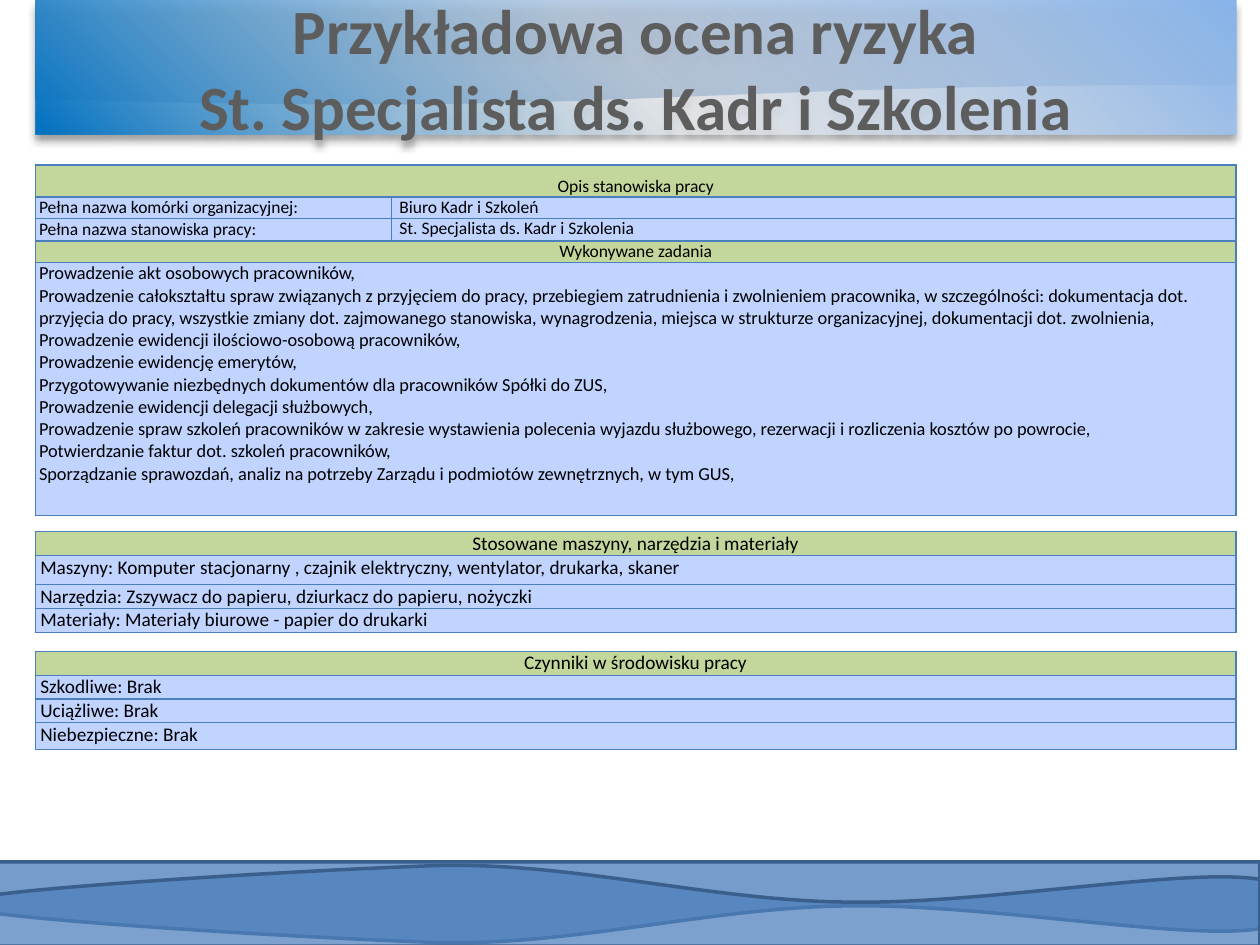
from lxml import etree
from pptx import Presentation
from pptx.dml.color import RGBColor
from pptx.enum.shapes import MSO_SHAPE
from pptx.enum.text import MSO_ANCHOR, PP_ALIGN
from pptx.oxml import parse_xml
from pptx.oxml.ns import nsdecls, qn
from pptx.util import Inches, Pt

RECT, DOCUMENT = MSO_SHAPE.RECTANGLE, MSO_SHAPE.FLOWCHART_DOCUMENT
TOP, MIDDLE = MSO_ANCHOR.TOP, MSO_ANCHOR.MIDDLE
LEFT, CENTER = PP_ALIGN.LEFT, PP_ALIGN.CENTER

COLORS = {
    "blue": "4F81BD", "wave_line": "3A5F8C", "border": "4B7EBC",
    "header": "C3D69B", "cell": "C0D4FF", "text": "000000", "title": "5D5D5D",
    "grad_start": "0070C0", "grad_mid": "F9FBFE", "grad_end": "87B3E9",
}
X, WIDTH = 0.28, 9.53

TASKS = [
    "Prowadzenie akt osobowych pracowników,",
    "Prowadzenie całokształtu spraw związanych z przyjęciem do pracy, przebiegiem "
    "zatrudnienia i zwolnieniem pracownika, w szczególności: dokumentacja dot. przyjęcia "
    "do pracy, wszystkie zmiany dot. zajmowanego stanowiska, wynagrodzenia, miejsca w "
    "strukturze organizacyjnej, dokumentacji dot. zwolnienia,",
    "Prowadzenie ewidencji ilościowo-osobową pracowników,",
    "Prowadzenie ewidencję emerytów,",
    "Przygotowywanie niezbędnych dokumentów dla pracowników Spółki do ZUS,",
    "Prowadzenie ewidencji delegacji służbowych,",
    "Prowadzenie spraw szkoleń pracowników w zakresie wystawienia polecenia wyjazdu "
    "służbowego, rezerwacji i rozliczenia kosztów po powrocie,",
    "Potwierdzanie faktur dot. szkoleń pracowników,",
    "Sporządzanie sprawozdań, analiz na potrzeby Zarządu i podmiotów zewnętrznych, "
    "w tym GUS,",
]

# Wave outline: straight edges, then curves of two control points and an end
WAVE_LINES = [(-0.03, 6.84), (10, 6.84), (10, 7.37)]
WAVE_CURVES = [
    [(9.42, 7.47), (7.82, 7.17), (6.73, 7.19)],
    [(5.64, 7.2), (4.55, 7.51), (3.46, 7.48)],
    [(2.36, 7.44), (0.58, 7.33), (-0.02, 7.25)],
]
WAVE_MIRROR = 14.35


def rgb(name):
    return RGBColor.from_string(COLORS[name])


class SlideBuilder:
    font = "Calibri"

    def __init__(self, slide):
        self.s = slide

    def style(self, p, size, color="text", bold=False, align=LEFT):
        p.alignment = align
        p.font.name, p.font.size, p.font.bold = self.font, Pt(size), bold
        p.font.color.rgb = rgb(color)

    def wave(self, opacity, mirrored=False):
        def emu(point):
            x, y = point
            return Inches(x), Inches(WAVE_MIRROR - y if mirrored else y)

        corners = [emu(pt) for pt in WAVE_LINES + [curve[-1] for curve in WAVE_CURVES]]
        builder = self.s.shapes.build_freeform(*corners[0])
        builder.add_line_segments(corners[1:], close=True)
        sp = builder.convert_to_shape()
        # Bend the last edges into Bezier curves
        edges = list(sp._element.iter(qn("a:lnTo")))[len(WAVE_LINES) - 1:]
        for edge, curve in zip(edges, WAVE_CURVES):
            bezier = etree.Element(qn("a:cubicBezTo"))
            for x, y in map(emu, curve):
                etree.SubElement(bezier, qn("a:pt"), x=str(x - sp.left), y=str(y - sp.top))
            edge.getparent().replace(edge, bezier)
        sp.shadow.inherit = False
        sp.fill.solid()
        sp.fill.fore_color.rgb = rgb("blue")
        color = sp.fill._xPr.find(qn("a:solidFill"))[0]
        etree.SubElement(color, qn("a:alpha"), val=str(opacity * 1000))
        sp.line.color.rgb = rgb("wave_line")
        sp.line.width = Pt(2)

    def shape(self, kind, x, y, w, h):
        sp = self.s.shapes.add_shape(kind, Inches(x), Inches(y), Inches(w), Inches(h))
        sp.shadow.inherit = False
        sp.fill.solid()
        sp.fill.fore_color.rgb = rgb("blue")
        sp.line.fill.background()
        return sp

    def title(self, text, x, y, w, h):
        sp = self.shape(RECT, x, y, w, h)
        props = sp._element.spPr
        # Diagonal gradient, half transparent in the middle
        gradient = parse_xml(
            f'<a:gradFill {nsdecls("a")} rotWithShape="1"><a:gsLst>'
            f'<a:gs pos="0"><a:srgbClr val="{COLORS["grad_start"]}"/></a:gs>'
            f'<a:gs pos="50000"><a:srgbClr val="{COLORS["grad_mid"]}">'
            '<a:alpha val="62000"/></a:srgbClr></a:gs>'
            f'<a:gs pos="100000"><a:srgbClr val="{COLORS["grad_end"]}"/></a:gs>'
            '</a:gsLst><a:lin ang="18900000" scaled="0"/></a:gradFill>')
        props.replace(props.find(qn("a:solidFill")), gradient)
        props.find(qn("a:effectLst")).append(parse_xml(
            f'<a:outerShdw {nsdecls("a")} blurRad="{Pt(4)}" dist="{Pt(3)}" '
            'dir="5400000" rotWithShape="0"><a:srgbClr val="000000">'
            '<a:alpha val="40000"/></a:srgbClr></a:outerShdw>'))
        tf = sp.text_frame
        tf.word_wrap, tf.vertical_anchor = True, MIDDLE
        p = tf.paragraphs[0]
        p.text = text
        self.style(p, 36, "title", True, CENTER)

    def cell(self, cell, lines, size, header=False, anchor=TOP, inset=0.04):
        cell.margin_left = cell.margin_right = Inches(inset)
        cell.margin_top = cell.margin_bottom = 0
        cell.vertical_anchor = anchor
        tf = cell.text_frame
        tf.text = "\n".join(lines)
        for p in tf.paragraphs:
            self.style(p, size, align=CENTER if header else LEFT)
        self.cell_look(cell, "header" if header else "cell")

    def cell_look(self, cell, fill):
        props = cell._tc.get_or_add_tcPr()
        for side in ("lnL", "lnR", "lnT", "lnB"):
            props.append(parse_xml(
                f'<a:{side} {nsdecls("a")} w="{Pt(0.75)}"><a:solidFill>'
                f'<a:srgbClr val="{COLORS["border"]}"/></a:solidFill></a:{side}>'))
        cell.fill.solid()
        cell.fill.fore_color.rgb = rgb(fill)

    def table(self, y, cols, rows):
        frame = self.s.shapes.add_table(len(rows), len(cols), Inches(X), Inches(y),
                                        Inches(WIDTH), Inches(sum(rows)))
        table = frame.table
        table.first_row = table.horz_banding = False
        for column, width in zip(table.columns, cols):
            column.width = Inches(width)
        for row, height in zip(table.rows, rows):
            row.height = Inches(height)
        return table

    def list_table(self, y, rows, texts):
        table = self.table(y, [WIDTH], rows)
        for i, text in enumerate(texts):
            self.cell(table.cell(i, 0), [text], 11, header=i == 0)

    def job_table(self, y):
        table = self.table(y, [2.83, 6.7], [0.25, 0.17, 0.18, 0.17, 2.01])
        # Rows across both columns
        for i in (0, 3, 4):
            self.cell_look(table.cell(i, 1), "cell" if i == 4 else "header")
            table.cell(i, 0).merge(table.cell(i, 1))
        self.cell(table.cell(0, 0), ["Opis stanowiska pracy"], 10, True, MIDDLE, 0.03)
        table.cell(0, 0).text_frame.paragraphs[0].line_spacing = 1.5
        self.cell(table.cell(3, 0), ["Wykonywane zadania"], 10, True, MIDDLE, 0.03)
        self.cell(table.cell(4, 0), TASKS, 10.5, inset=0.03)
        # Label and value rows
        details = [
            ("Pełna nazwa komórki organizacyjnej:", "Biuro Kadr i Szkoleń"),
            ("Pełna nazwa stanowiska pracy:", "St. Specjalista ds. Kadr i Szkolenia"),
        ]
        for i, (label, value) in enumerate(details, 1):
            self.cell(table.cell(i, 0), [label], 10, anchor=MIDDLE, inset=0.03)
            self.cell(table.cell(i, 1), [value], 10, inset=0.06)


def main():
    prs = Presentation()
    prs.slide_width, prs.slide_height = Inches(10), Inches(7.5)
    b = SlideBuilder(prs.slides.add_slide(prs.slide_layouts[6]))

    # Footer waves
    b.wave(78)
    b.wave(74, mirrored=True)

    # Title banner
    b.shape(DOCUMENT, X, 0, WIDTH, 0.84)
    b.title("Przykładowa ocena ryzyka\vSt. Specjalista ds. Kadr i Szkolenia",
            X, 0, WIDTH, 1.07)

    # Tables
    b.job_table(1.31)
    b.list_table(4.22, [0.18, 0.23, 0.18, 0.18], [
        "Stosowane maszyny, narzędzia i materiały",
        "Maszyny: Komputer stacjonarny , czajnik elektryczny, wentylator, drukarka, skaner",
        "Narzędzia: Zszywacz do papieru, dziurkacz do papieru, nożyczki",
        "Materiały: Materiały biurowe - papier do drukarki",
    ])
    b.list_table(5.17, [0.18, 0.18, 0.18, 0.21], [
        "Czynniki w środowisku pracy", "Szkodliwe: Brak", "Uciążliwe: Brak",
        "Niebezpieczne: Brak",
    ])
    prs.save("out.pptx")


if __name__ == "__main__":
    main()
